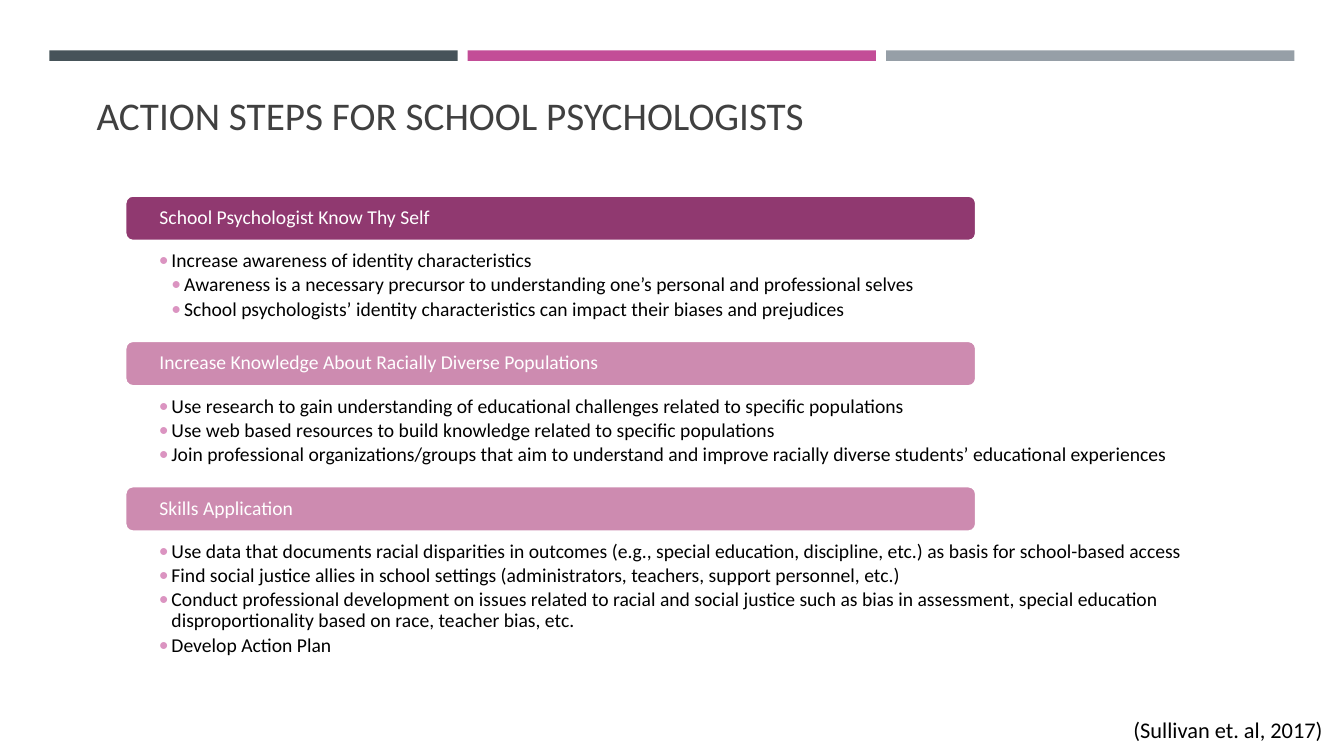
from dataclasses import dataclass

from lxml.etree import SubElement
from pptx import Presentation
from pptx.dml.color import RGBColor
from pptx.enum.shapes import MSO_SHAPE
from pptx.enum.text import MSO_ANCHOR, PP_ALIGN
from pptx.oxml.ns import qn
from pptx.util import Pt


@dataclass(frozen=True)
class Theme:
    font: str = "Calibri"
    title_size: int = 28
    citation_size: int = 16
    body_size: int = 14
    white: str = "FFFFFF"
    black: str = "000000"
    title: str = "404040"
    bullet: str = "DB94C1"
    plum: str = "903970"
    rose: str = "CD8BB0"
    bars: tuple = ("465359", "C34D97", "969FA7")


THEME = Theme()

SECTIONS = [
    ("School Psychologist Know Thy Self", THEME.plum, 81.4, [
        (1, "Increase awareness of identity characteristics"),
        (2, "Awareness is a necessary precursor to understanding one’s personal and professional selves"),
        (2, "School psychologists’ identity characteristics can impact their biases and prejudices"),
    ]),
    ("Increase Knowledge About Racially Diverse Populations", THEME.rose, 81.4, [
        (1, "Use research to gain understanding of educational challenges related to specific populations"),
        (1, "Use web based resources to build knowledge related to specific populations"),
        (1, "Join professional organizations/groups that aim to understand and improve racially diverse "
            "students’ educational experiences"),
    ]),
    ("Skills Application", THEME.rose, 114.5, [
        (1, "Use data that documents racial disparities in outcomes (e.g., special education, discipline, "
            "etc.) as basis for school-based access"),
        (1, "Find social justice allies in school settings (administrators, teachers, support personnel, etc.)"),
        (1, "Conduct professional development on issues related to racial and social justice such as bias in "
            "assessment, special education disproportionality based on race, teacher bias, etc."),
        (1, "Develop Action Plan"),
    ]),
]


def add_box(slide, kind, left, top, width, height, fill):
    shape = slide.shapes.add_shape(kind, Pt(left), Pt(top), Pt(width), Pt(height))
    shape.shadow.inherit = False
    shape.fill.solid()
    shape.fill.fore_color.rgb = RGBColor.from_string(fill)
    shape.line.fill.background()
    return shape


def set_frame(frame, anchor, left, top, right, bottom):
    frame.word_wrap = True
    frame.vertical_anchor = anchor
    frame.margin_left, frame.margin_top = Pt(left), Pt(top)
    frame.margin_right, frame.margin_bottom = Pt(right), Pt(bottom)


def write(paragraph, text, size, color, alignment=PP_ALIGN.LEFT):
    paragraph.text = text
    paragraph.alignment = alignment
    paragraph.font.name = THEME.font
    paragraph.font.size = Pt(size)
    paragraph.font.color.rgb = RGBColor.from_string(color)


def add_text(slide, left, top, width, height, text, size, color, anchor, alignment):
    box = slide.shapes.add_textbox(Pt(left), Pt(top), Pt(width), Pt(height))
    set_frame(box.text_frame, anchor, 7.2, 3.6, 7.2, 3.6)
    write(box.text_frame.paragraphs[0], text, size, color, alignment)


def add_bullet(paragraph, level):
    properties = paragraph._p.get_or_add_pPr()
    properties.set("marL", str(Pt(9 * level)))
    properties.set("indent", str(-Pt(9)))
    color = SubElement(properties, qn("a:buClr"))
    SubElement(color, qn("a:srgbClr")).set("val", THEME.bullet)
    SubElement(properties, qn("a:buFont")).set("typeface", THEME.font)
    SubElement(properties, qn("a:buChar")).set("char", "•")


def add_top_bars(slide, left, top, width, height, gap=7.2):
    count = len(THEME.bars)
    bar_width = (width - gap * (count - 1)) / count
    for index, color in enumerate(THEME.bars):
        add_box(slide, MSO_SHAPE.RECTANGLE, left + index * (bar_width + gap), top,
                bar_width, height, color)


def add_section(slide, left, top, width, height, heading, color, items):
    body = add_box(slide, MSO_SHAPE.RECTANGLE, left, top, width, height, THEME.white)
    set_frame(body.text_frame, MSO_ANCHOR.TOP, 67.4, 23, 67.4, 8)
    for index, (level, text) in enumerate(items):
        paragraph = body.text_frame.paragraphs[0] if index == 0 else body.text_frame.add_paragraph()
        add_bullet(paragraph, level)
        write(paragraph, text, THEME.body_size, THEME.black)
        paragraph.line_spacing = 0.9
        paragraph.space_after = Pt(2.1)

    header = add_box(slide, MSO_SHAPE.ROUNDED_RECTANGLE, left + 43.4, top - 16.5,
                     width * 0.7, 32.4, color)
    header.line.color.rgb = RGBColor.from_string(THEME.white)
    header.line.width = Pt(1.75)
    set_frame(header.text_frame, MSO_ANCHOR.MIDDLE, 22.9, 0, 22.9, 0)
    paragraph = header.text_frame.paragraphs[0]
    write(paragraph, heading, THEME.body_size, THEME.white)
    paragraph.line_spacing = 0.9


def add_sections(slide, left, top, width, gap=22.4):
    for heading, color, height, items in SECTIONS:
        add_section(slide, left, top, width, height, heading, color, items)
        top += height + gap


def main():
    presentation = Presentation()
    presentation.slide_width, presentation.slide_height = Pt(960), Pt(540)
    slide = presentation.slides.add_slide(presentation.slide_layouts[6])
    add_top_bars(slide, 35.2, 36, 889.4, 7.5)
    add_text(slide, 61.9, 49, 854, 53.3, "ACTION STEPS FOR SCHOOL PSYCHOLOGISTS",
             THEME.title_size, THEME.title, MSO_ANCHOR.BOTTOM, PP_ALIGN.LEFT)
    add_text(slide, 547.2, 508.3, 404.6, 26.6, "(Sullivan et. al, 2017)",
             THEME.citation_size, THEME.black, MSO_ANCHOR.TOP, PP_ALIGN.RIGHT)
    add_sections(slide, 46.1, 156.2, 868.3)
    presentation.save("out.pptx")


if __name__ == "__main__":
    main()
